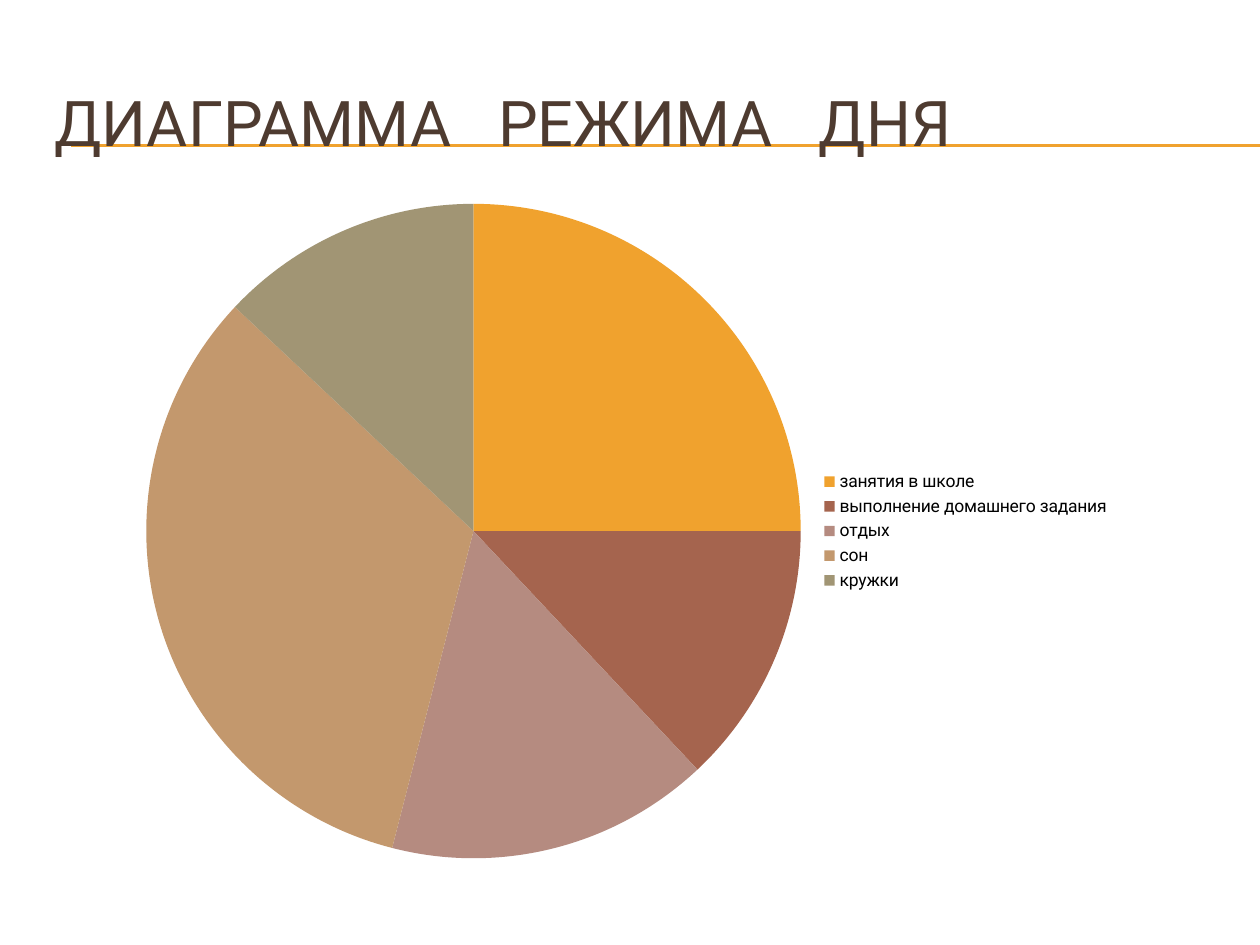
from lxml import etree
from pptx import Presentation
from pptx.chart.data import CategoryChartData
from pptx.dml.color import RGBColor
from pptx.enum.chart import XL_CHART_TYPE, XL_LEGEND_POSITION
from pptx.enum.shapes import MSO_CONNECTOR
from pptx.enum.text import MSO_ANCHOR, PP_ALIGN
from pptx.oxml.ns import qn
from pptx.util import Inches, Pt

PIE = XL_CHART_TYPE.PIE
LEGEND_RIGHT = XL_LEGEND_POSITION.RIGHT
STRAIGHT = MSO_CONNECTOR.STRAIGHT
MIDDLE = MSO_ANCHOR.MIDDLE
LEFT = PP_ALIGN.LEFT

FONT = "Roboto"
BLACK = RGBColor(0x00, 0x00, 0x00)
BROWN = RGBColor(0x4E, 0x3B, 0x30)
ORANGE = RGBColor(0xF0, 0xA2, 0x2E)
RUST = RGBColor(0xA5, 0x64, 0x4E)
ROSE = RGBColor(0xB5, 0x8B, 0x80)
TAN = RGBColor(0xC3, 0x98, 0x6D)
OLIVE = RGBColor(0xA1, 0x95, 0x74)

# Activity, share of the day in percent, slice colour
DAY_PLAN = [
    ("занятия в школе", 25, ORANGE),
    ("выполнение домашнего задания", 13, RUST),
    ("отдых", 16, ROSE),
    ("сон", 33, TAN),
    ("кружки", 13, OLIVE),
]


def add_rule(page, top):
    """Draw a thin horizontal line running to the right edge."""
    rule = page.shapes.add_connector(
        STRAIGHT, Inches(0.56), Inches(top), Inches(10), Inches(top))
    rule.line.color.rgb = ORANGE
    rule.line.width = Pt(0.75)
    etree.SubElement(rule._element.spPr, qn("a:effectLst"))


def set_title(page, text):
    title = page.shapes.title
    title.left, title.top = Inches(0.33), Inches(0.5)
    title.width, title.height = Inches(9.5), Inches(0.92)
    frame = title.text_frame
    frame.text = text
    frame.word_wrap = True
    frame.vertical_anchor = MIDDLE
    para = frame.paragraphs[0]
    para.alignment = LEFT
    font = para.runs[0].font
    font.name = FONT
    font.size = Pt(36)
    font.color.rgb = BROWN


def add_day_chart(page):
    names, shares, colours = zip(*DAY_PLAN)
    data = CategoryChartData()
    data.categories = names
    data.add_series("Series 1", shares)
    chart = page.shapes.add_chart(
        PIE, Inches(1.02), Inches(1.48), Inches(7.89), Inches(5.47), data).chart

    chart.has_title = False
    chart.font.name = FONT
    chart.font.size = Pt(10)
    chart.font.color.rgb = BLACK
    chart.has_legend = True
    chart.legend.position = LEGEND_RIGHT
    chart.legend.include_in_layout = False

    plot = chart.plots[0]
    plot.vary_by_categories = True
    for index, colour in enumerate(colours):
        slice_format = plot.series[0].points[index].format
        slice_format.fill.solid()
        slice_format.fill.fore_color.rgb = colour
        slice_format.line.fill.background()


def main():
    deck = Presentation()
    deck.slide_width, deck.slide_height = Inches(10), Inches(7.5)
    page = deck.slides.add_slide(deck.slide_layouts[5])

    # Double rule behind the title
    for top in (1.15, 1.16):
        add_rule(page, top)

    # Title, brought in front of the rules
    set_title(page, "ДИАГРАММА   РЕЖИМА   ДНЯ")
    page.shapes._spTree.append(page.shapes.title._element)

    # Pie of the day
    add_day_chart(page)

    deck.save("out.pptx")


if __name__ == "__main__":
    main()
